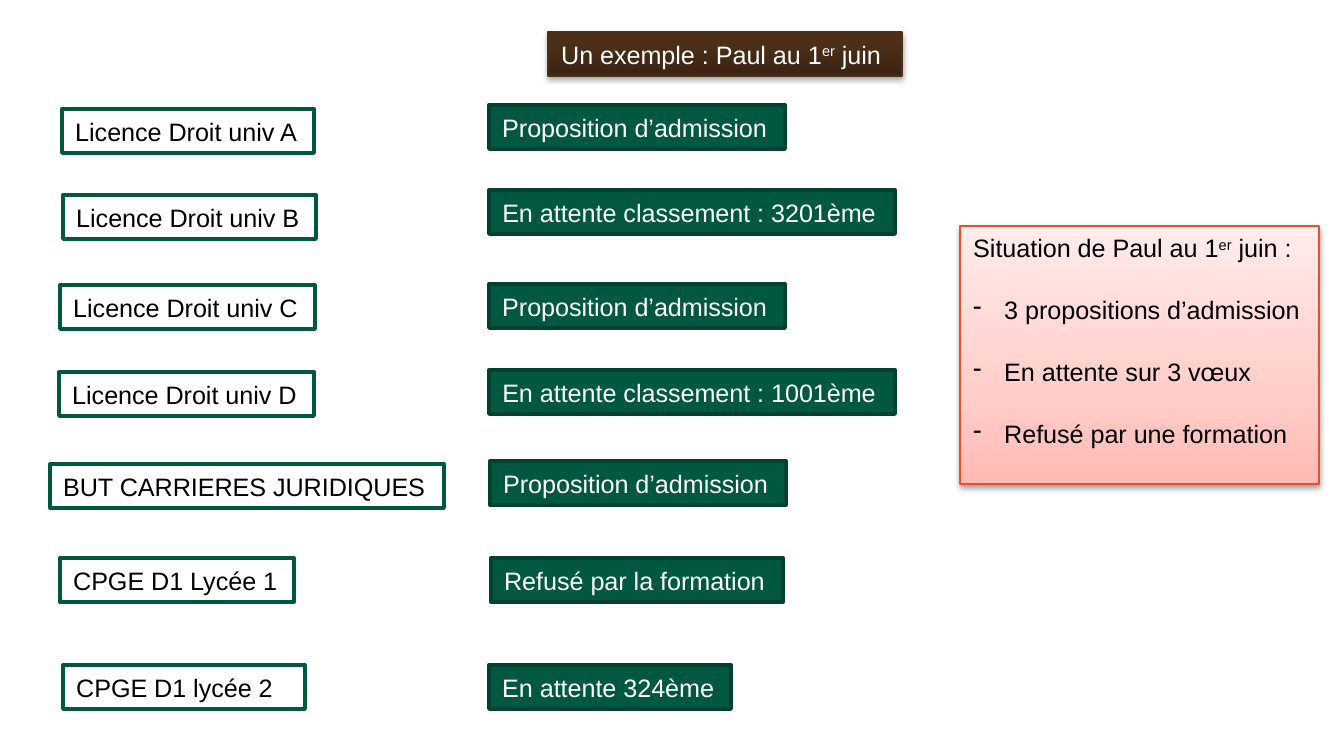
from copy import deepcopy

from lxml import etree
from pptx import Presentation
from pptx.dml.color import RGBColor
from pptx.enum.shapes import MSO_SHAPE as Shape
from pptx.enum.text import MSO_ANCHOR as Anchor, PP_ALIGN as Align
from pptx.oxml.ns import qn
from pptx.util import Pt

PX = 914400 / 134.4
PAGE_SIZE = (1344, 756)
BOX_HEIGHT = 44
FONT, FONT_SIZE = "Arial", 13.5
BULLET_INDENT = 31

COLORS = {
    "white": "FFFFFF", "black": "000000", "green": "005841",
    "dark_green": "004130", "red": "E94F2D", "brown": "48301D",
}
PINK_STOPS = [(0, "FFBAB4"), (0.35, "FFCECA"), (1, "FFECEB")]
BROWN_STOPS = [(0, "3B2412"), (0.8, "4D2F18"), (1, "4E2F17")]

# Each wish and its answer: text, left, top, width
WISHES = [
    ("Licence Droit univ A", 62, 109, 252),
    ("Licence Droit univ B", 63, 195, 253),
    ("Licence Droit univ C", 60, 285, 255),
    ("Licence Droit univ D", 59, 372, 255),
    ("BUT CARRIERES JURIDIQUES", 50, 464, 394),
    ("CPGE D1 Lycée 1", 60, 558, 234),
    ("CPGE D1 lycée 2", 63, 665, 242),
]
ANSWERS = [
    ("Proposition d’admission", 489, 105, 296),
    ("En attente classement : 3201ème", 489, 190, 406),
    ("Proposition d’admission", 489, 284, 296),
    ("En attente classement : 1001ème", 489, 370, 406),
    ("Proposition d’admission", 490, 461, 296),
    ("Refusé par la formation", 491, 558, 292),
    ("En attente 324ème", 489, 665, 242),
]

# Runs of the two dated headings; "er" is raised
TITLE = ["Un exemple : Paul au 1", "er", " juin"]
SUMMARY_HEAD = ["Situation de Paul au 1", "er", " juin :"]
SUMMARY_ITEMS = [
    "3 propositions d’admission",
    "En attente sur 3 vœux",
    "Refusé par une formation",
]


def px(value):
    return round(value * PX)


def rgb(name):
    return RGBColor.from_string(COLORS[name])


def add_box(page, left, top, width, height, line, line_width):
    box = page.shapes.add_shape(
        Shape.RECTANGLE, px(left), px(top), px(width), px(height))
    box.shadow.inherit = False
    box.line.color.rgb = rgb(line)
    box.line.width = Pt(line_width)
    box.text_frame.word_wrap = True
    box.text_frame.vertical_anchor = Anchor.MIDDLE
    return box


def style_text(box, color):
    for para in box.text_frame.paragraphs:
        para.alignment = Align.LEFT
        for span in para.runs:
            span.font.name = FONT
            span.font.size = Pt(FONT_SIZE)
            span.font.color.rgb = rgb(color)


def add_label(page, label, fill, line, color):
    text, left, top, width = label
    box = add_box(page, left, top, width, BOX_HEIGHT, line, 2)
    box.fill.solid()
    box.fill.fore_color.rgb = rgb(fill)
    box.text_frame.text = text
    style_text(box, color)


def fill_gradient(box, stops):
    box.fill.gradient()
    box.fill.gradient_angle = 90
    stop_list = box._element.spPr.find(qn("a:gradFill")).find(qn("a:gsLst"))
    stop_list.append(deepcopy(stop_list[-1]))
    for stop, (position, color) in zip(box.fill.gradient_stops, stops):
        stop.position = position
        stop.color.rgb = RGBColor.from_string(color)


def add_shadow(box, opacity, distance):
    effects = box._element.spPr.find(qn("a:effectLst"))
    shadow = etree.SubElement(
        effects, qn("a:outerShdw"), blurRad=str(Pt(3.1)),
        dist=str(Pt(distance)), dir="5400000", rotWithShape="0")
    color = etree.SubElement(shadow, qn("a:srgbClr"), val=COLORS["black"])
    etree.SubElement(color, qn("a:alpha"), val=str(opacity * 1000))


def write_dated(para, parts):
    for part in parts:
        span = para.add_run()
        span.text = part
        if part == "er":
            span.font._element.set("baseline", "30000")


def add_dash(para):
    props = para._p.get_or_add_pPr()
    props.set("marL", str(px(BULLET_INDENT)))
    props.set("indent", str(-px(BULLET_INDENT)))
    etree.SubElement(props, qn("a:buFontTx"))
    etree.SubElement(props, qn("a:buChar"), char="-")


deck = Presentation()
deck.slide_width, deck.slide_height = map(px, PAGE_SIZE)
page = deck.slides.add_slide(deck.slide_layouts[6])

# Wishes and their answers
for wish in WISHES:
    add_label(page, wish, "white", "green", "black")
for answer in ANSWERS:
    add_label(page, answer, "green", "dark_green", "white")

# Summary panel
summary = add_box(page, 960, 226, 359, 258, "red", 0.75)
fill_gradient(summary, PINK_STOPS)
add_shadow(summary, 38, 1.6)
frame = summary.text_frame
frame.vertical_anchor = Anchor.TOP
write_dated(frame.paragraphs[0], SUMMARY_HEAD)
for item in SUMMARY_ITEMS:
    para = frame.add_paragraph()
    para.text = item
    add_dash(para)
    para.space_before = Pt(17)
style_text(summary, "black")

# Title
title = add_box(page, 548, 32, 354, BOX_HEIGHT, "brown", 0.75)
fill_gradient(title, BROWN_STOPS)
add_shadow(title, 35, 1.8)
write_dated(title.text_frame.paragraphs[0], TITLE)
style_text(title, "white")

deck.save("out.pptx")
